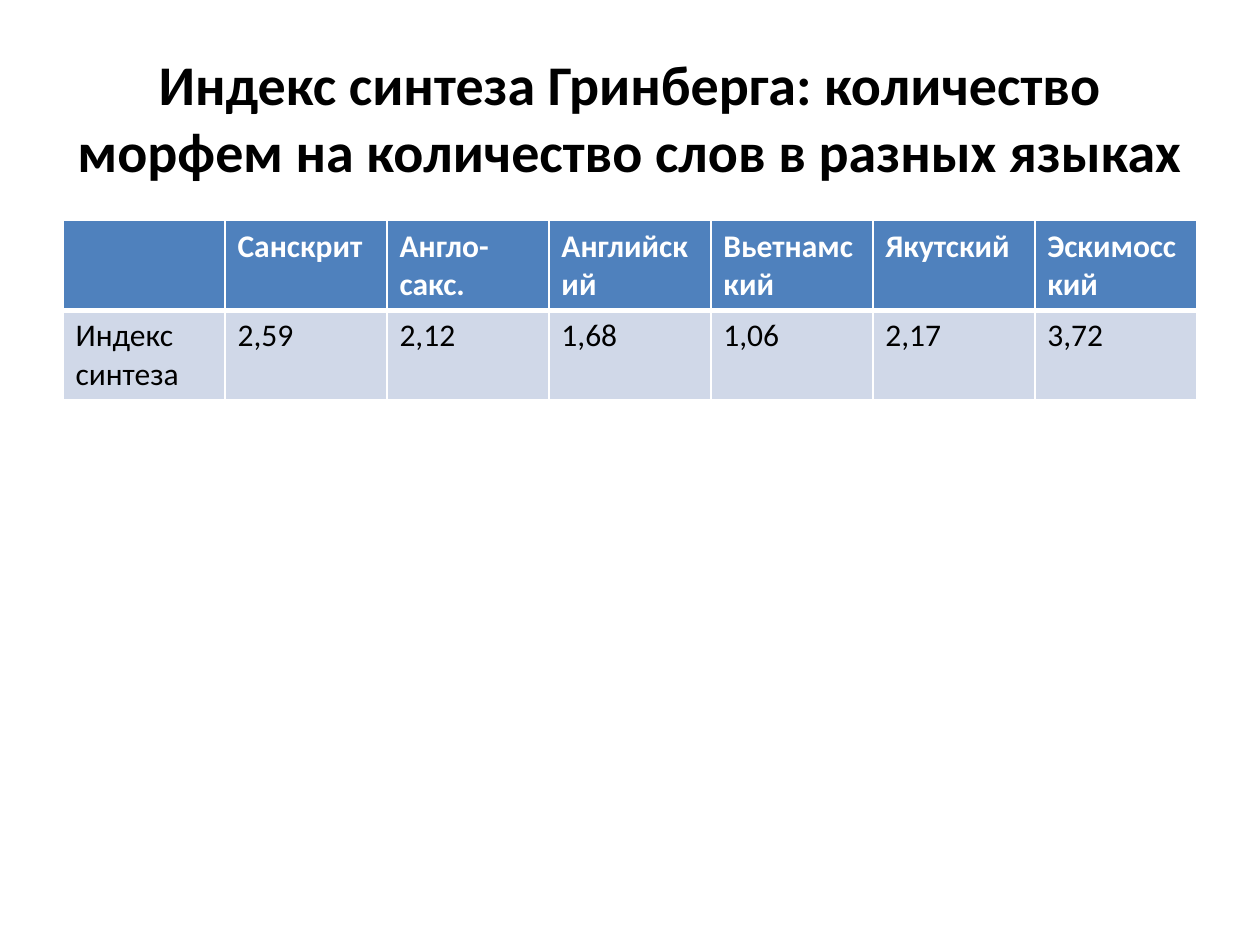
from dataclasses import dataclass

from lxml.etree import SubElement
from pptx import Presentation
from pptx.dml.color import RGBColor
from pptx.enum.text import MSO_ANCHOR, PP_ALIGN
from pptx.oxml.ns import qn
from pptx.slide import Slide
from pptx.util import Cm, Pt

TITLE = "Индекс синтеза Гринберга: количество морфем на количество слов в разных языках"
SYNTHESIS_INDEX = {
    "Санскрит": "2,59",
    "Англо-сакс.": "2,12",
    "Английский": "1,68",
    "Вьетнамский": "1,06",
    "Якутский": "2,17",
    "Эскимосский": "3,72",
}


def color(hex_value):
    return RGBColor.from_string(hex_value)


@dataclass
class IndexSlide:
    slide: Slide
    font_name: str = "Calibri"
    ink: str = "000000"
    light: str = "FFFFFF"
    header_fill: str = "4F81BD"
    body_fill: str = "D0D8E8"

    def format_font(self, paragraph, size, ink, bold):
        font = paragraph.font
        font.name = self.font_name
        font.size = Pt(size)
        font.bold = bold
        font.color.rgb = color(ink)

    def title(self, wording, left, top, width, height):
        heading = self.slide.shapes.title
        heading.left, heading.top = Cm(left), Cm(top)
        heading.width, heading.height = Cm(width), Cm(height)
        frame = heading.text_frame
        frame.text = wording
        frame.word_wrap = True
        frame.vertical_anchor = MSO_ANCHOR.MIDDLE
        paragraph = frame.paragraphs[0]
        paragraph.alignment = PP_ALIGN.CENTER
        self.format_font(paragraph, 32, self.ink, True)

    def borders(self, cell, **widths):
        properties = cell._tc.get_or_add_tcPr()
        for side in "LRTB":
            line = SubElement(properties, qn(f"a:ln{side}"), w=str(Pt(widths.get(side, 1))))
            fill = SubElement(line, qn("a:solidFill"))
            SubElement(fill, qn("a:srgbClr"), val=self.light)

    def table(self, rows, left, top, width, height):
        grid = self.slide.shapes.add_table(
            len(rows), len(rows[0]), Cm(left), Cm(top), Cm(width), Cm(height)
        ).table
        for row_index, row in enumerate(rows):
            is_header = row_index == 0
            for column_index, wording in enumerate(row):
                cell = grid.cell(row_index, column_index)
                cell.text = wording
                self.borders(cell, **({"B": 3} if is_header else {"T": 3}))
                cell.fill.solid()
                cell.fill.fore_color.rgb = color(self.header_fill if is_header else self.body_fill)
                self.format_font(
                    cell.text_frame.paragraphs[0], 18, self.light if is_header else self.ink, is_header
                )


def main():
    presentation = Presentation()
    presentation.slide_width, presentation.slide_height = Cm(25.4), Cm(19.05)
    page = IndexSlide(presentation.slides.add_slide(presentation.slide_layouts[5]))
    page.title(TITLE, 1.27, 0.76, 22.86, 3.18)
    page.table(
        [["", *SYNTHESIS_INDEX], ["Индекс синтеза", *SYNTHESIS_INDEX.values()]],
        1.27, 4.45, 22.86, 3.56,
    )
    presentation.save("out.pptx")


if __name__ == "__main__":
    main()
